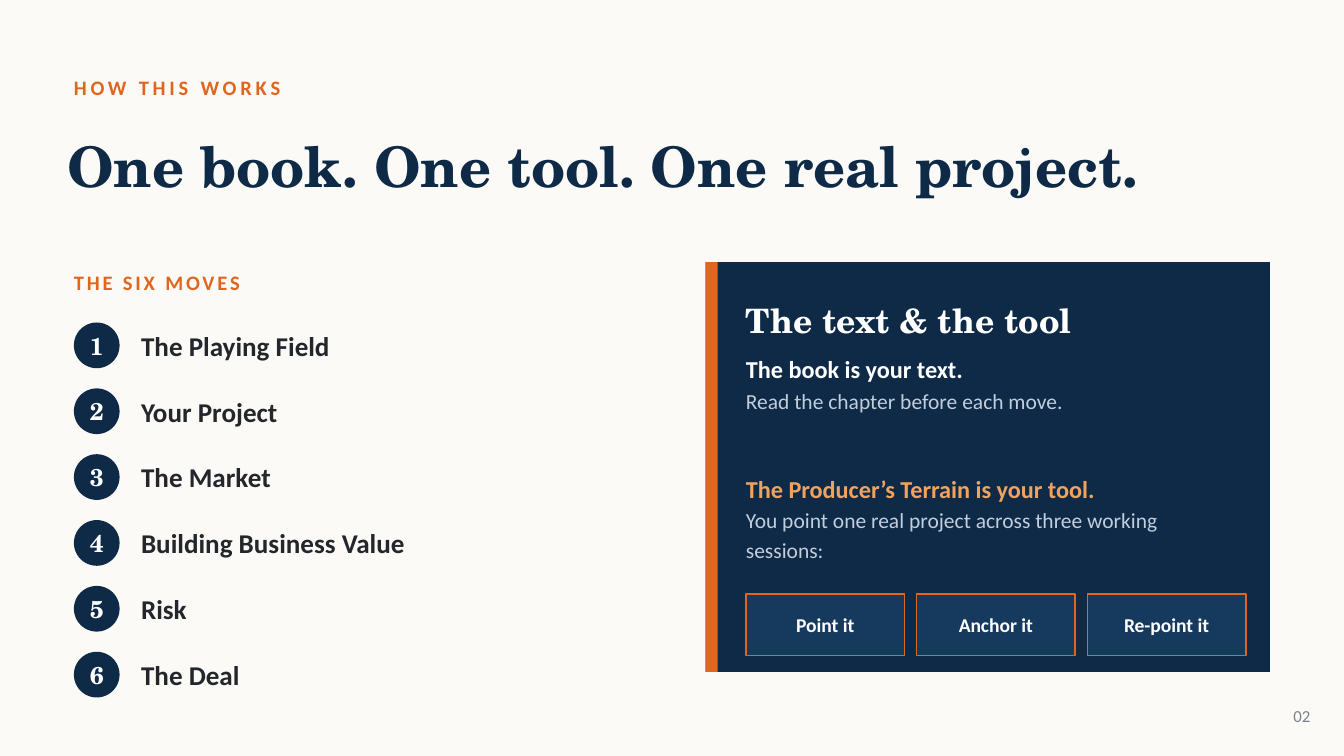
import pptx
import pptx.dml.color
import pptx.enum.shapes
import pptx.enum.text
import pptx.util

PX = 914400 // 200
COLORS = {
    "paper": "FBFAF7", "navy": "0E2A47", "blue": "16395E", "orange": "E0661F",
    "amber": "F0A35E", "ink": "23262B", "white": "FFFFFF", "mist": "C3CEDC",
    "gray": "7A828B",
}
SERIF = "TeX Gyre Schola"
SANS = "Calibri"
ALIGN = pptx.enum.text.PP_ALIGN
SHAPE = pptx.enum.shapes.MSO_SHAPE

deck = pptx.Presentation()
deck.slide_width = 2000 * PX
deck.slide_height = 1125 * PX
page = deck.slides.add_slide(deck.slide_layouts[6])
page.background.fill.solid()
page.background.fill.fore_color.rgb = pptx.dml.color.RGBColor.from_string(COLORS["paper"])


def add_box(left, top, width, height, kind=None, fill=None, line=None):
    area = [length * PX for length in (left, top, width, height)]
    if kind is None:
        box = page.shapes.add_textbox(*area)
    else:
        box = page.shapes.add_shape(kind, *area)
        box.shadow.inherit = False
        box.fill.solid()
        box.fill.fore_color.rgb = pptx.dml.color.RGBColor.from_string(COLORS[fill])
        if line:
            box.line.color.rgb = pptx.dml.color.RGBColor.from_string(COLORS[line])
            box.line.width = pptx.util.Pt(0.75)
        else:
            box.line.fill.background()
    frame = box.text_frame
    frame.word_wrap = True
    frame.vertical_anchor = pptx.enum.text.MSO_ANCHOR.MIDDLE
    frame.margin_left = frame.margin_right = frame.margin_top = frame.margin_bottom = 0
    return box


def write(para, text, size, color, face=SANS, bold=True, align=ALIGN.LEFT, tracking=0):
    span = para.add_run()
    span.text = text
    if tracking:
        span._r.get_or_add_rPr().set("spc", str(tracking))
    para.alignment = align
    para.font.size = pptx.util.Pt(size)
    para.font.name = face
    para.font.bold = bold
    para.font.color.rgb = pptx.dml.color.RGBColor.from_string(COLORS[color])


kicker = add_box(110, 100, 1200, 60)
write(kicker.text_frame.paragraphs[0], "HOW THIS WORKS", 11, "orange", tracking=200)

title = add_box(100, 164, 1800, 180).text_frame.paragraphs[0]
write(title, "One book. One tool. One real project.", 30, "navy", SERIF)
title.line_spacing = pptx.util.Pt(30.6)

moves_label = add_box(110, 390, 800, 60)
write(moves_label.text_frame.paragraphs[0], "THE SIX MOVES", 11, "orange", tracking=150)

moves = ["The Playing Field", "Your Project", "The Market",
         "Building Business Value", "Risk", "The Deal"]
for index, move in enumerate(moves):
    top = 480 + 98 * index
    badge = add_box(110, top, 68, 68, SHAPE.OVAL, "navy")
    write(badge.text_frame.paragraphs[0], str(index + 1), 13, "white", SERIF, align=ALIGN.CENTER)
    label = add_box(210, top - 4, 720, 76)
    write(label.text_frame.paragraphs[0], move, 14.5, "ink")

add_box(1050, 390, 840, 610, SHAPE.RECTANGLE, "navy")
add_box(1050, 390, 18, 610, SHAPE.RECTANGLE, "orange")

heading = add_box(1110, 436, 740, 80)
write(heading.text_frame.paragraphs[0], "The text & the tool", 18, "white", SERIF)

body = add_box(1110, 532, 730, 300).text_frame
lines = [
    ("The book is your text.", 13, "white", True, 0),
    ("Read the chapter before each move.", 11.5, "mist", False, 0),
    ("The Producer’s Terrain is your tool.", 13, "amber", True, 32),
    ("You point one real project across three working sessions:", 11.5, "mist", False, 0),
]
for index, (text, size, color, bold, gap) in enumerate(lines):
    para = body.add_paragraph() if index else body.paragraphs[0]
    write(para, text, size, color, bold=bold)
    para.line_spacing = pptx.util.Pt(16)
    para.space_before = pptx.util.Pt(gap)

for index, session in enumerate(["Point it", "Anchor it", "Re-point it"]):
    button = add_box(1110 + 254 * index, 884, 236, 92, SHAPE.RECTANGLE, "blue", "orange")
    write(button.text_frame.paragraphs[0], session, 10.5, "white", align=ALIGN.CENTER)

page_number = add_box(1870, 1036, 80, 60)
write(page_number.text_frame.paragraphs[0], "02", 9, "gray", bold=False, align=ALIGN.RIGHT)

deck.save("out.pptx")
